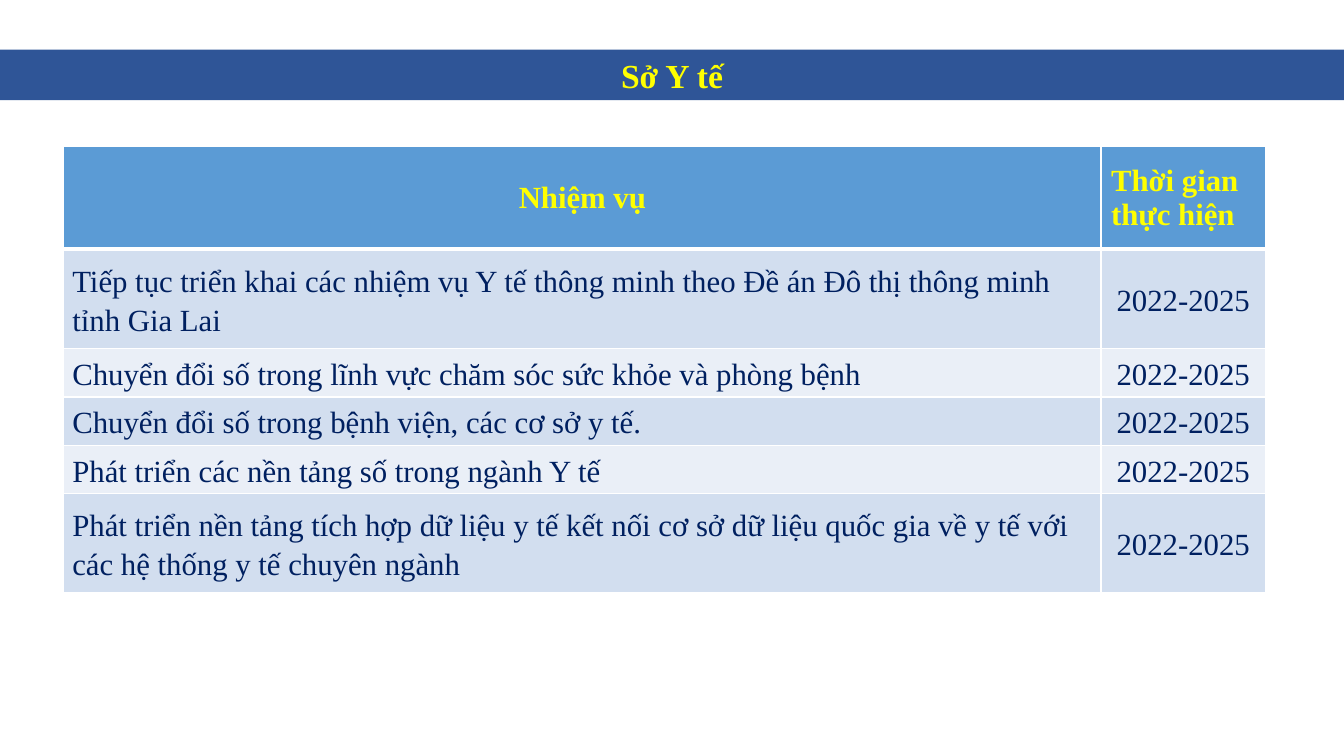
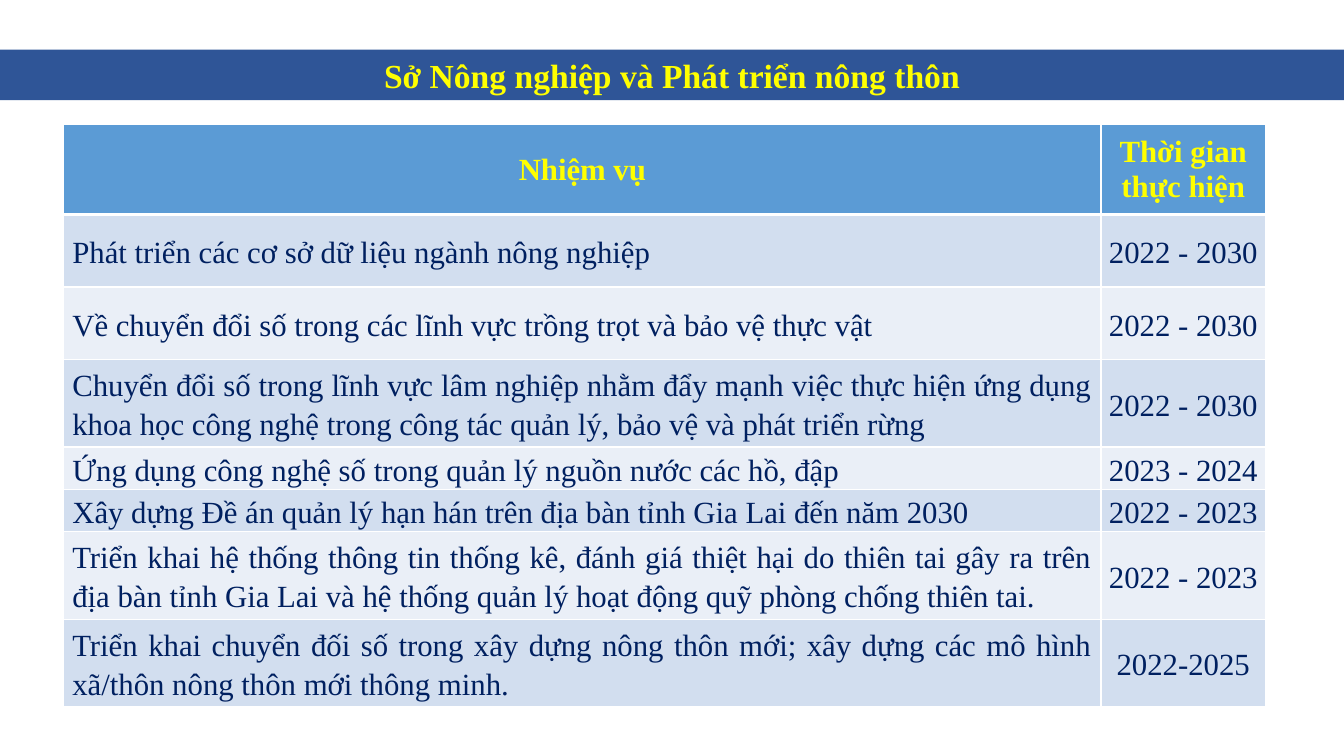
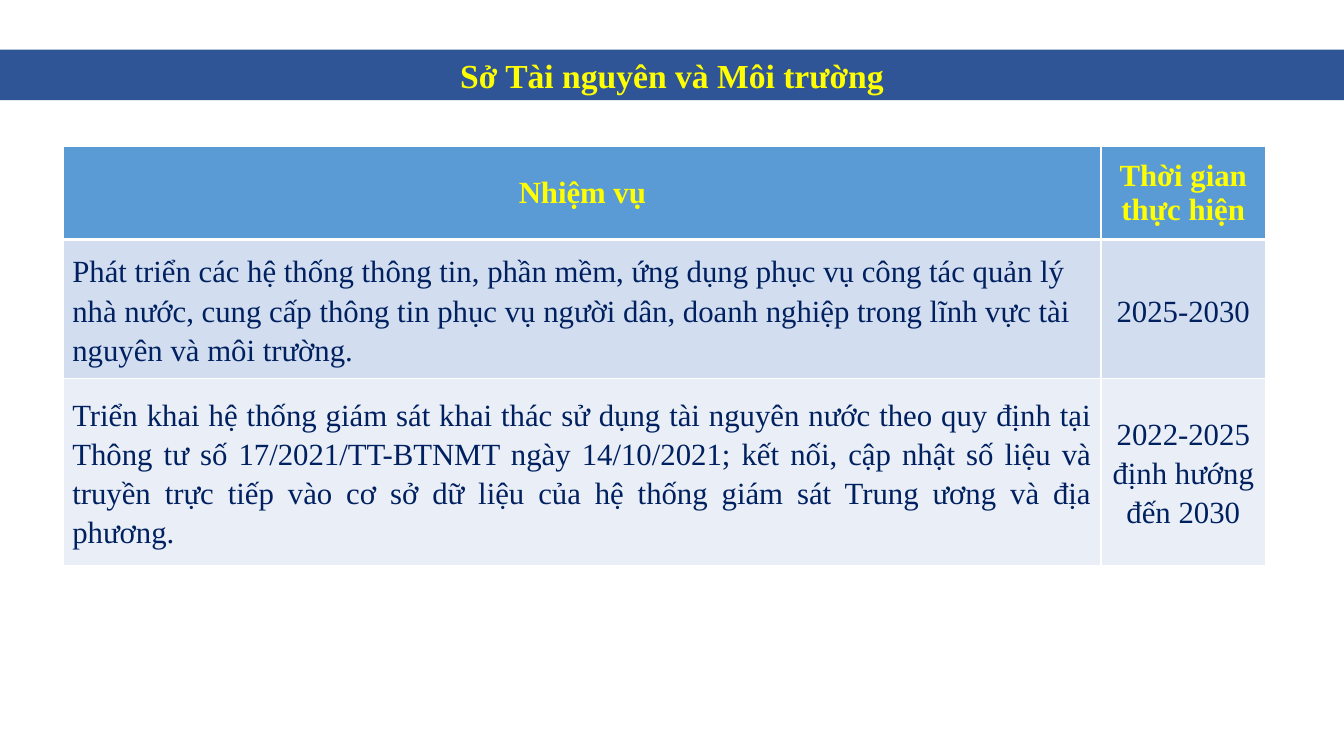
from lxml import etree
from pptx import Presentation
from pptx.dml.color import RGBColor
from pptx.enum.text import MSO_ANCHOR, MSO_AUTO_SIZE, PP_ALIGN
from pptx.oxml.ns import qn
from pptx.util import Pt

LEFT, CENTER, JUSTIFY = PP_ALIGN.LEFT, PP_ALIGN.CENTER, PP_ALIGN.JUSTIFY
MIDDLE = MSO_ANCHOR.MIDDLE
NO_FIT = MSO_AUTO_SIZE.NONE

# Shared look
FONT = "Times New Roman"
NAVY, BAND, HEADER = "002060", "2F5597", "5B9BD5"
YELLOW, GOLD, WHITE = "FFFF00", "FFC000", "FFFFFF"
STRIPES = ["D2DEEF", "EAEFF7"]
SLIDE_WIDTH, SLIDE_HEIGHT = 960, 540
TABLE_LEFT = 45.5
COLUMN_WIDTHS = [741, 117.4]
HEADINGS = ["Nhiệm vụ", "Thời gian thực hiện"]

# Each row: height, task, alignment of the task, period
departments = [
    {
        "title": "Sở Y tế", "top": 104.5, "header_height": 73.5, "period_align": LEFT,
        "rows": [
            (71.2, "Tiếp tục triển khai các nhiệm vụ Y tế thông minh theo Đề án Đô thị "
                   "thông minh tỉnh Gia Lai", LEFT, "2022-2025"),
            (34.4, "Chuyển đổi số trong lĩnh vực chăm sóc sức khỏe và phòng bệnh", LEFT, "2022-2025"),
            (34.4, "Chuyển đổi số trong bệnh viện, các cơ sở y tế.", LEFT, "2022-2025"),
            (34.4, "Phát triển các nền tảng số trong ngành Y tế", LEFT, "2022-2025"),
            (71.2, "Phát triển nền tảng tích hợp dữ liệu y tế kết nối cơ sở dữ liệu quốc gia "
                   "về y tế với các hệ thống y tế chuyên ngành", LEFT, "2022-2025"),
        ],
    },
    {
        "title": "Sở Nông nghiệp và Phát triển nông thôn",
        "top": 89.2, "header_height": 64, "period_align": CENTER,
        "rows": [
            (51.8, "Phát triển các cơ sở dữ liệu ngành nông nghiệp", JUSTIFY, "2022 - 2030"),
            (51.8, "Về chuyển đổi số trong các lĩnh vực trồng trọt và bảo vệ thực vật",
             JUSTIFY, "2022 - 2030"),
            (62.6, "Chuyển đổi số trong lĩnh vực lâm nghiệp nhằm đẩy mạnh việc thực hiện ứng dụng "
                   "khoa học công nghệ trong công tác quản lý, bảo vệ và phát triển rừng",
             JUSTIFY, "2022 - 2030"),
            (30.2, "Ứng dụng công nghệ số trong quản lý nguồn nước các hồ, đập",
             JUSTIFY, "2023 - 2024"),
            (30.2, "Xây dựng Đề án quản lý hạn hán trên địa bàn tỉnh Gia Lai đến năm 2030",
             JUSTIFY, "2022 - 2023"),
            (62.6, "Triển khai hệ thống thông tin thống kê, đánh giá thiệt hại do thiên tai gây ra "
                   "trên địa bàn tỉnh Gia Lai và hệ thống quản lý hoạt động quỹ phòng chống thiên tai.",
             JUSTIFY, "2022 - 2023"),
            (62.6, "Triển khai chuyển đối số trong xây dựng nông thôn mới; xây dựng các mô hình "
                   "xã/thôn nông thôn mới thông minh.", JUSTIFY, "2022-2025"),
        ],
    },
    {
        "title": "Sở Tài nguyên và Môi trường",
        "top": 104.5, "header_height": 66.6, "period_align": CENTER,
        "rows": [
            (99.4, "Phát triển các hệ thống thông tin, phần mềm, ứng dụng phục vụ công tác quản lý "
                   "nhà nước, cung cấp thông tin phục vụ người dân, doanh nghiệp trong lĩnh vực "
                   "tài nguyên và môi trường.", LEFT, "2025-2030"),
            (133.2, "Triển khai hệ thống giám sát khai thác sử dụng tài nguyên nước theo quy định tại "
                    "Thông tư số 17/2021/TT-BTNMT ngày 14/10/2021; kết nối, cập nhật số liệu và "
                    "truyền trực tiếp vào cơ sở dữ liệu của hệ thống giám sát Trung ương và địa phương.",
             JUSTIFY, "2022-2025 định hướng đến 2030"),
        ],
    },
]


def color(value):
    return RGBColor.from_string(value)


def add_line(parent, tag, width, value):
    line = etree.SubElement(parent, qn(tag), w=str(Pt(width)))
    fill = etree.SubElement(line, qn("a:solidFill"))
    etree.SubElement(fill, qn("a:srgbClr"), val=value)
    return line


deck = Presentation()
deck.slide_width, deck.slide_height = Pt(SLIDE_WIDTH), Pt(SLIDE_HEIGHT)
title_only = deck.slide_layouts[5]

for department in departments:
    page = deck.slides.add_slide(title_only)

    # Title band across the full width
    title = page.shapes.title
    title.left, title.top = Pt(0), Pt(35.5)
    title.width, title.height = Pt(SLIDE_WIDTH), Pt(36)
    title.fill.solid()
    title.fill.fore_color.rgb = color(BAND)
    frame = title.text_frame
    frame.text = department["title"]
    frame.auto_size = NO_FIT
    frame.vertical_anchor = MIDDLE
    para = frame.paragraphs[0]
    para.alignment = CENTER
    para.font.name, para.font.size, para.font.bold = FONT, Pt(24), True
    para.font.color.rgb = color(YELLOW)
    letters = para._p.pPr.find(qn("a:defRPr"))
    letters.insert(0, add_line(letters, "a:ln", 1, GOLD))

    # Table of tasks and periods
    rows = [(department["header_height"], HEADINGS, [CENTER, department["period_align"]])]
    rows += [(height, [task, period], [align, CENTER])
             for height, task, align, period in department["rows"]]
    table = page.shapes.add_table(
        len(rows), len(COLUMN_WIDTHS), Pt(TABLE_LEFT), Pt(department["top"]),
        Pt(sum(COLUMN_WIDTHS)), Pt(sum(row[0] for row in rows))).table
    for column, width in zip(table.columns, COLUMN_WIDTHS):
        column.width = Pt(width)

    for row_index, (height, texts, alignments) in enumerate(rows):
        table.rows[row_index].height = Pt(height)
        is_header = row_index == 0
        for column_index, (text, alignment) in enumerate(zip(texts, alignments)):
            cell = table.cell(row_index, column_index)
            cell.text = text
            cell.vertical_anchor = MIDDLE

            # Borders: a heavier rule under the header
            properties = cell._tc.get_or_add_tcPr()
            for tag in ("a:lnL", "a:lnR", "a:lnT", "a:lnB"):
                under_header = (row_index, tag) in ((0, "a:lnB"), (1, "a:lnT"))
                add_line(properties, tag, 3 if under_header else 1, WHITE)
            cell.fill.solid()
            cell.fill.fore_color.rgb = color(HEADER if is_header else STRIPES[(row_index - 1) % 2])

            para = cell.text_frame.paragraphs[0]
            para.alignment = alignment
            if not is_header:
                cell.margin_top = cell.margin_bottom = Pt(0)
                cell.margin_left = Pt(6.2 if column_index == 0 else 0)
                cell.margin_right = Pt(7 if column_index == 0 else 0)
                para.line_spacing = 1.15
            para.font.name, para.font.size, para.font.bold = FONT, Pt(22), is_header
            para.font.color.rgb = color(YELLOW if is_header else NAVY)

deck.save("out.pptx")
